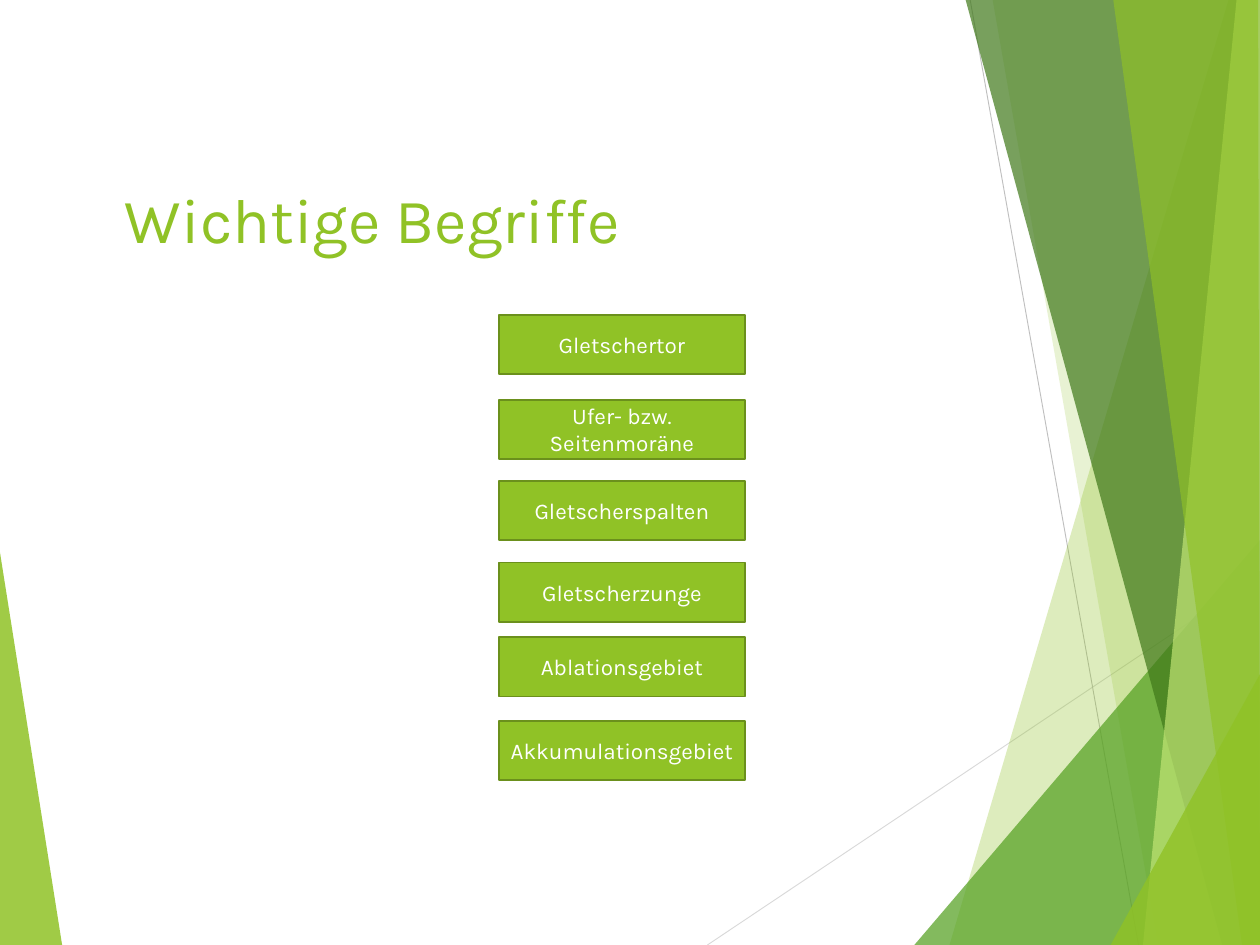
"""Build the slide of key glacier terms on a faceted green background."""
from lxml.etree import SubElement
from pptx import Presentation
from pptx.dml.color import RGBColor
from pptx.enum.shapes import MSO_CONNECTOR as CONN, MSO_SHAPE as SHAPE
from pptx.enum.text import MSO_ANCHOR as ANCHOR, PP_ALIGN as ALIGN
from pptx.oxml.ns import qn
from pptx.util import Inches, Pt

COL = ROW = Inches(1)
COLS, ROWS = 14, 10.5
GREEN = RGBColor(0x90, 0xC2, 0x26)
OLIVE = RGBColor(0x6B, 0x90, 0x1C)
LEAF = RGBColor(0x54, 0xA0, 0x21)
FOREST = RGBColor(0x3F, 0x78, 0x19)
LIME = RGBColor(0xC0, 0xE4, 0x74)
SILVER = RGBColor(0xD9, 0xD9, 0xD9)
GREY = RGBColor(0xBF, 0xBF, 0xBF)
WHITE = RGBColor(0xFF, 0xFF, 0xFF)


def add_text(sp, text, size, color, align=ALIGN.LEFT, anchor=ANCHOR.MIDDLE):
    tf = sp.text_frame
    tf.word_wrap = True
    tf.vertical_anchor = anchor
    p = tf.paragraphs[0]
    p.alignment = align
    r = p.add_run()
    r.text = text
    r.font.name = "Karla"
    r.font.size = Pt(size)
    r.font.color.rgb = color


prs = Presentation()
prs.slide_width, prs.slide_height = int(COLS * COL), int(ROWS * ROW)
s = prs.slides.add_slide(prs.slide_layouts[6])

rays = [((7.86, ROWS), (COLS, 6.39), SILVER), ((10.78, 0), (12.65, ROWS), GREY)]
facets = [
    ([(0, 6.14), (0.69, ROWS), (0, ROWS)], GREEN, 85),
    ([(13.65, 0), (10.55, ROWS), (COLS, ROWS), (COLS, 0)], GREEN, 30),
    ([(11.03, 0), (12.87, ROWS), (COLS, ROWS), (COLS, 0)], GREEN, 20),
    ([(10.16, ROWS), (COLS, 6), (COLS, ROWS)], LEAF, 72),
    ([(10.73, 0), (13.58, ROWS), (COLS, ROWS), (COLS, 0)], FOREST, 70),
    ([(13.74, 0), (12.7, ROWS), (COLS, ROWS), (COLS, 0)], LIME, 70),
    ([(12.37, 0), (13.8, ROWS), (COLS, ROWS), (13.98, 0)], GREEN, 65),
    ([(12.34, ROWS), (COLS, 7.49), (COLS, ROWS)], GREEN, 80),
]

for (x1, y1), (x2, y2), color in rays:
    ends = [int(v * COL) for v in (x1, y1, x2, y2)]
    line = s.shapes.add_connector(CONN.STRAIGHT, *ends)
    line.line.color.rgb = color
    line.line.width = Pt(0.75)
    SubElement(line._element.spPr, qn("a:effectLst"))

for points, color, opacity in facets:
    corners = [(int(x * COL), int(y * ROW)) for x, y in points]
    fb = s.shapes.build_freeform(*corners[0])
    fb.add_line_segments(corners[1:], close=True)
    sp = fb.convert_to_shape()
    sp.shadow.inherit = False
    sp.fill.solid()
    sp.fill.fore_color.rgb = color
    sp.line.fill.background()
    clr = sp._element.spPr.find(qn("a:solidFill")).find(qn("a:srgbClr"))
    SubElement(clr, qn("a:alpha"), val=str(opacity * 1000))

title = s.shapes.add_textbox(int(1.29 * COL), int(1.93 * ROW), int(11.5 * COL), int(0.97 * ROW))
add_text(title, "Wichtige Begriffe", 50.4, GREEN, anchor=ANCHOR.BOTTOM)

terms = [
    ("Gletschertor", 3.5),
    ("Ufer- bzw. Seitenmoräne", 4.44),
    ("Gletscherspalten", 5.34),
    ("Gletscherzunge", 6.25),
    ("Ablationsgebiet", 7.08),
    ("Akkumulationsgebiet", 8.01),
]
for term, top in terms:
    sp = s.shapes.add_shape(SHAPE.RECTANGLE, int(5.54 * COL), int(top * ROW),
                            int(2.74 * COL), int(0.66 * ROW))
    sp.shadow.inherit = False
    sp.fill.solid()
    sp.fill.fore_color.rgb = GREEN
    sp.line.color.rgb = OLIVE
    sp.line.width = Pt(1.5)
    add_text(sp, term, 18, WHITE, align=ALIGN.CENTER)

prs.save("out.pptx")
